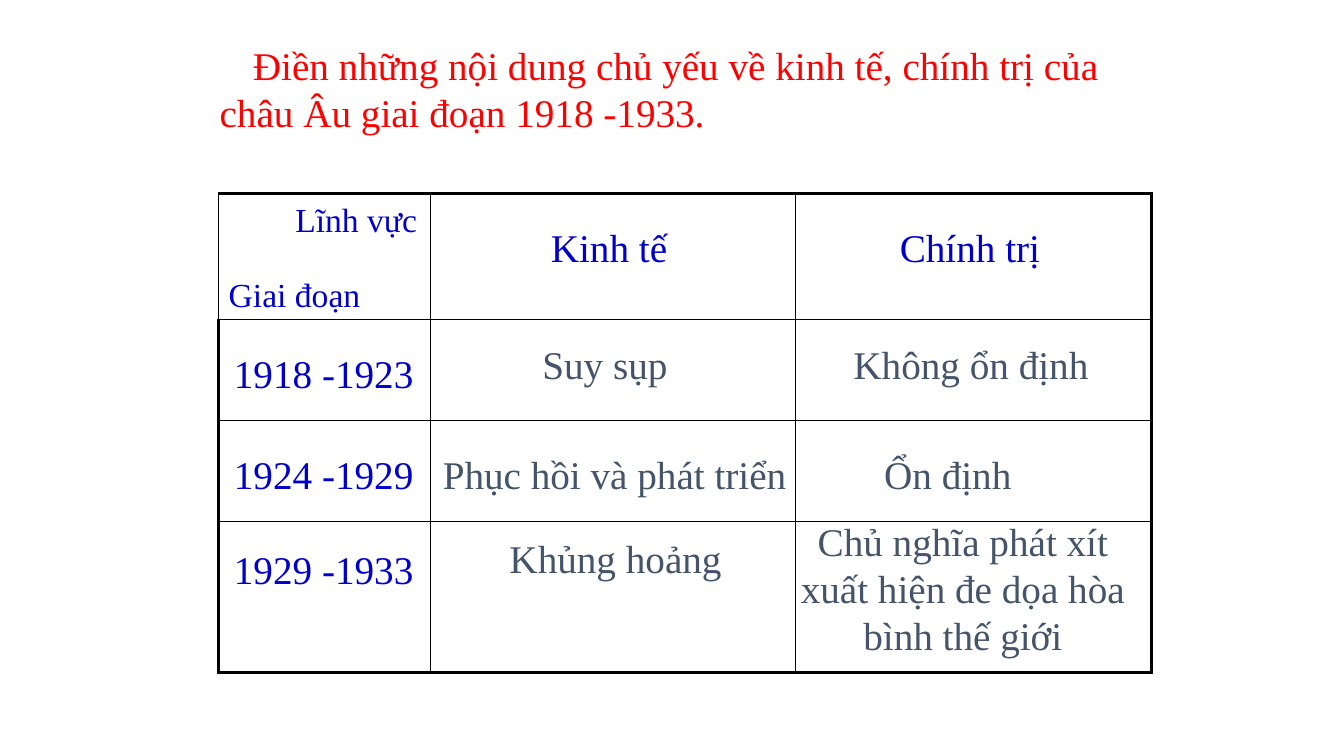
from dataclasses import dataclass

from lxml import etree
from pptx import Presentation
from pptx.dml.color import RGBColor
from pptx.enum.text import MSO_AUTO_SIZE, PP_ALIGN
from pptx.oxml.ns import qn
from pptx.util import Emu, Pt

LEFT = PP_ALIGN.LEFT
CENTER = PP_ALIGN.CENTER
FIT_SHAPE = MSO_AUTO_SIZE.SHAPE_TO_FIT_TEXT
PX = 9144


@dataclass(frozen=True)
class Theme:
    font: str = "Times New Roman"
    title: str = "FF0000"
    heading: str = "0000CC"
    answer: str = "44546A"
    border: str = "000000"
    body_size: int = 28
    corner_size: int = 24
    thin: float = 1
    thick: float = 2.25


class SlideBuilder:
    def __init__(self, slide, theme):
        self.slide = slide
        self.theme = theme

    def text(self, words, left, top, width, height, color,
             size=None, align=CENTER, wrap=True, indent=0, inset_top=5):
        box = self.slide.shapes.add_textbox(
            *(Emu(length * PX) for length in (left, top, width, height)))
        frame = box.text_frame
        frame.text = words
        frame.word_wrap = wrap
        frame.auto_size = FIT_SHAPE
        frame.margin_top = Emu(inset_top * PX)
        para = frame.paragraphs[0]
        para.alignment = align
        if indent:
            para._p.get_or_add_pPr().set("indent", str(indent * PX))
        font = para.runs[0].font
        font.name = self.theme.font
        font.size = Pt(size or self.theme.body_size)
        font.color.rgb = RGBColor.from_string(color)

    def border(self, cell, side, points):
        line = etree.SubElement(cell._tc.get_or_add_tcPr(), qn(f"a:ln{side}"),
                                w=str(Pt(points)))
        fill = etree.SubElement(line, qn("a:solidFill"))
        etree.SubElement(fill, qn("a:srgbClr"), val=self.theme.border)

    def grid(self, left, top, columns, rows):
        frame = self.slide.shapes.add_table(
            len(rows), len(columns), Emu(left * PX), Emu(top * PX),
            Emu(sum(columns) * PX), Emu(sum(rows) * PX))
        table = frame.table
        table.first_row = False
        table.horz_banding = False
        for column, width in zip(table.columns, columns):
            column.width = Emu(width * PX)
        for row, height in zip(table.rows, rows):
            row.height = Emu(height * PX)
        last_row, last_column = len(rows) - 1, len(columns) - 1
        for r in range(len(rows)):
            for c in range(len(columns)):
                cell = table.cell(r, c)
                outer = {"L": c == 0 and r > 0, "R": c == last_column,
                         "T": r == 0, "B": r == last_row}
                for side, is_outer in outer.items():
                    self.border(cell, side,
                                self.theme.thick if is_outer else self.theme.thin)
                cell.fill.background()


def main():
    deck = Presentation()
    deck.slide_width = Emu(1333 * PX)
    deck.slide_height = Emu(750 * PX)
    theme = Theme()
    page = SlideBuilder(deck.slides.add_slide(deck.slide_layouts[6]), theme)

    page.grid(217, 192, columns=(210, 362, 353), rows=(125, 100, 100, 150))

    for words, left, top in (("Lĩnh vực", 283, 192), ("Giai đoạn", 217, 267)):
        page.text(words, left, top, 175, 51, theme.heading,
                  size=theme.corner_size, align=LEFT)
    for words, left in (("Kinh tế", 425), ("Chính trị", 783)):
        page.text(words, left, 217, 358, 57, theme.heading)
    for period, top in (("1918 -1923", 342), ("1924 -1929", 442),
                        ("1929 -1933", 536)):
        page.text(period, 217, top, 208, 57, theme.heading)

    page.text("Điền những nội dung chủ yếu về kinh tế, chính trị của "
              "châu Âu giai đoạn 1918 -1933.",
              208, 31, 942, 111, theme.title, align=LEFT, indent=33, inset_top=10)

    for words, left, top, width in (("Suy sụp", 527, 333, 146),
                                    ("Không ổn định", 835, 333, 256),
                                    ("Phục hồi và phát triển", 427, 442, 365),
                                    ("Ổn định", 866, 442, 148)):
        page.text(words, left, top, width, 57, theme.answer, wrap=False)
    page.text("Khủng hoảng", 429, 525, 363, 57, theme.answer)
    page.text("Chủ nghĩa phát xít xuất hiện đe dọa hòa bình thế giới",
              777, 508, 356, 151, theme.answer)

    deck.save("out.pptx")


if __name__ == "__main__":
    main()
